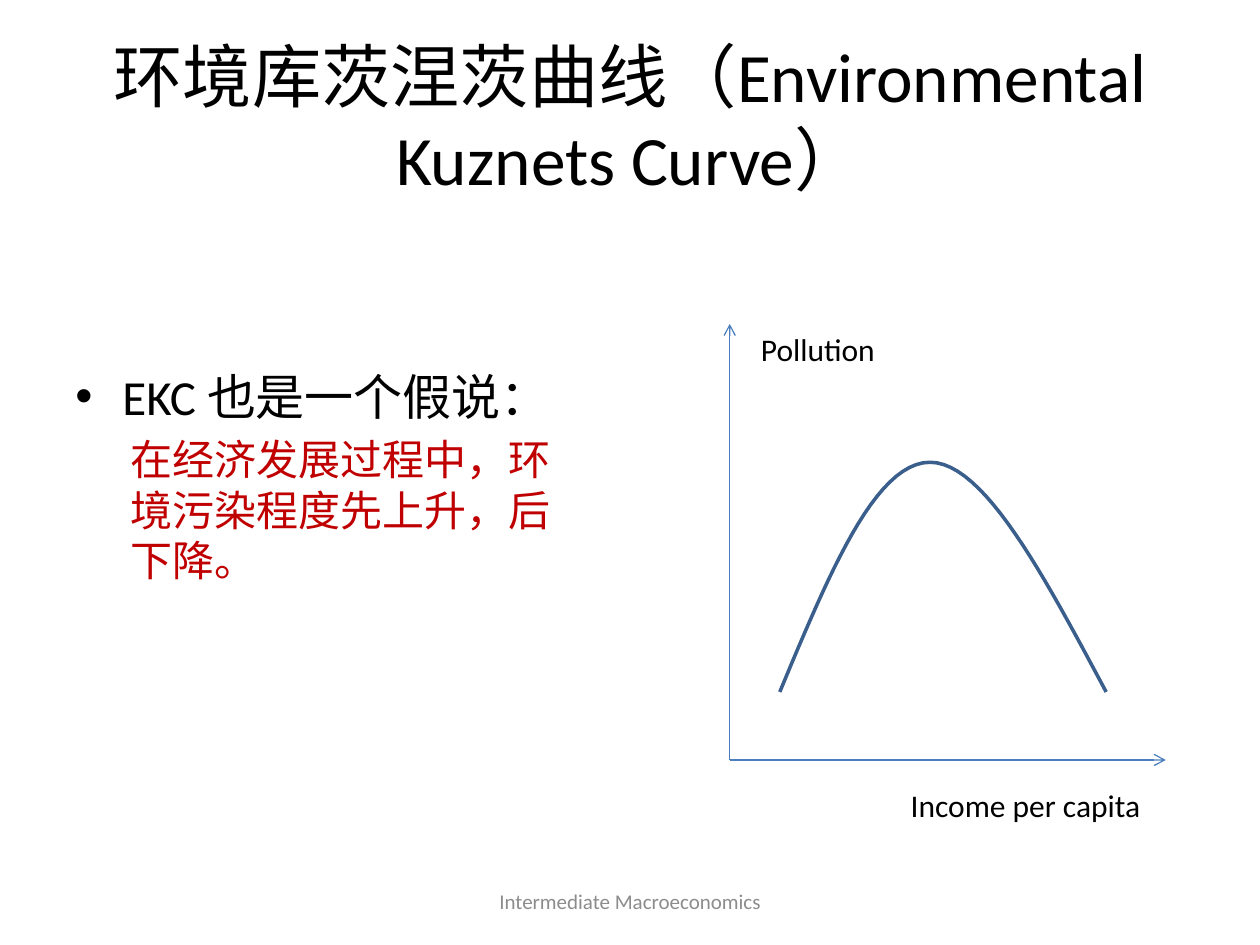
from lxml import etree
from pptx import Presentation
from pptx.dml.color import RGBColor
from pptx.enum import shapes, text
from pptx.oxml.ns import qn
from pptx.util import Cm, Pt

FONT = "Calibri"
BLACK, RED, GREY = "000000", "C00000", "8C8C8C"
AXIS, CURVE = "4B7EBC", "3A5F8C"
CENTER, MIDDLE = text.PP_ALIGN.CENTER, text.MSO_ANCHOR.MIDDLE


def rgb(color):
    return RGBColor.from_string(color)


def add_box(slide, x, y, w, h, anchor=text.MSO_ANCHOR.TOP, top=0.13):
    tf = slide.shapes.add_textbox(Cm(x), Cm(y), Cm(w), Cm(h)).text_frame
    tf.word_wrap = True
    tf.vertical_anchor = anchor
    tf.margin_top = Cm(top)
    return tf


def write(p, words, size=18, color=BLACK, align=None, before=0,
          left=0, hanging=0, bullet=None):
    r = p.add_run()
    r.text = words
    r.font.name, r.font.size = FONT, Pt(size)
    r.font.color.rgb = rgb(color)
    p.alignment = align
    p.space_before = Pt(before)
    pPr = p._p.get_or_add_pPr()
    pPr.set("marL", str(Cm(left)))
    pPr.set("indent", str(-Cm(hanging)))
    if bullet:
        etree.SubElement(pPr, qn("a:buFont")).set("typeface", "Arial")
        etree.SubElement(pPr, qn("a:buChar")).set("char", bullet)


def add_label(slide, words, x, y, w, h, anchor=MIDDLE, **style):
    write(add_box(slide, x, y, w, h, anchor).paragraphs[0], words, **style)


def add_axis(slide, start, end):
    line = slide.shapes.add_connector(
        shapes.MSO_CONNECTOR.STRAIGHT, *(Cm(v) for v in start + end))
    line.line.color.rgb = rgb(AXIS)
    line.line.width = Pt(0.75)
    ln = line.line._get_or_add_ln()
    etree.SubElement(ln, qn("a:tailEnd")).set("type", "arrow")
    etree.SubElement(line._element.spPr, qn("a:effectLst"))


def bezier(a, b, c, d, t):
    s = 1 - t
    return tuple(s**3 * i + 3 * s**2 * t * j + 3 * s * t**2 * k + t**3 * m
                 for i, j, k, m in zip(a, b, c, d))


def add_curve(slide, start, segments, steps=24):
    points = [start]
    for controls in segments:
        first = points[-1]
        points += [bezier(first, *controls, n / steps)
                   for n in range(1, steps + 1)]
    points = [(Cm(x), Cm(y)) for x, y in points]
    builder = slide.shapes.build_freeform(*points[0])
    builder.add_line_segments(points[1:], close=False)
    sp = builder.convert_to_shape()
    sp.shadow.inherit = False
    sp.fill.background()
    sp.line.color.rgb = rgb(CURVE)
    sp.line.width = Pt(2)


def main():
    prs = Presentation()
    prs.slide_width, prs.slide_height = Cm(25.4), Cm(19.05)
    slide = prs.slides.add_slide(prs.slide_layouts[6])

    # Title
    add_label(slide, "环境库茨涅茨曲线（Environmental Kuznets Curve）",
              1.27, 0.76, 22.86, 3.18, size=39.6, align=CENTER)

    # Hypothesis, set low in its box by the top margin
    tf = add_box(slide, 1.27, 4.45, 10.44, 12.57, top=2.94)
    write(tf.paragraphs[0], "EKC 也是一个假说：", size=28,
          left=0.95, hanging=0.95, bullet="•")
    write(tf.add_paragraph(), "在经济发展过程中，环境污染程度先上升，后下降。",
          size=24, color=RED, before=4.8, left=1.11)

    # Footer
    add_label(slide, "Intermediate Macroeconomics", 8.68, 17.65, 8.05, 1.02,
              size=12, color=GREY, align=CENTER)

    # Axes
    origin = (14.71, 15.32)
    add_axis(slide, origin, (23.5, origin[1]))
    add_axis(slide, origin, (origin[0], 6.53))

    # Inverted U curve
    base, mid, peak = 13.95, 11.63, 9.32
    add_curve(slide, (15.72, base), [
        ((16.69, mid), (17.63, peak), (18.75, peak)),
        ((19.84, peak), (21.06, mid), (22.3, base)),
    ])

    # Axis names
    add_label(slide, "Income per capita", 18.11, 15.72, 6.4, 1.02,
              anchor=text.MSO_ANCHOR.TOP)
    add_label(slide, "Pollution", 15.09, 6.53, 5, 1.02,
              anchor=text.MSO_ANCHOR.TOP)

    prs.save("out.pptx")


if __name__ == "__main__":
    main()
